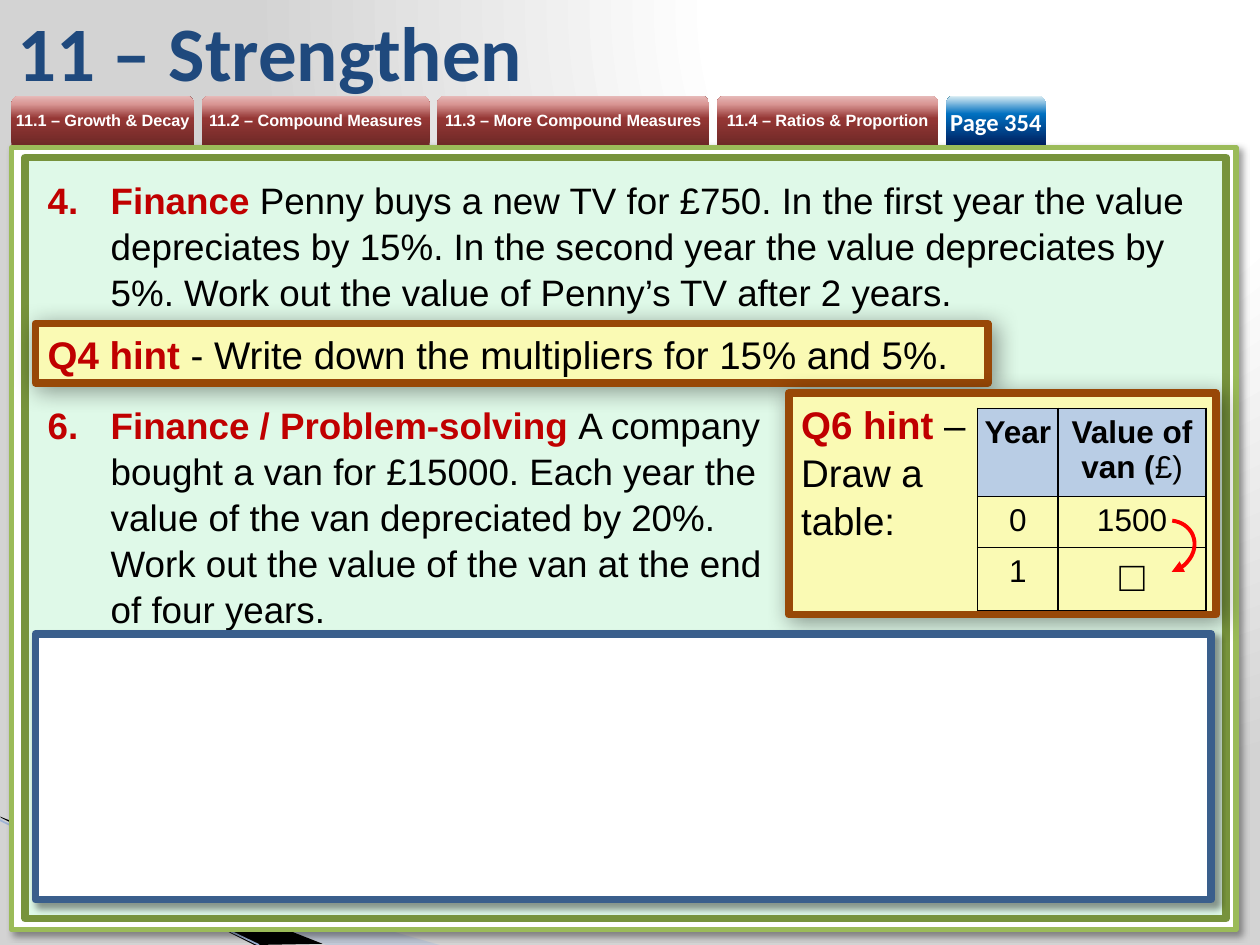
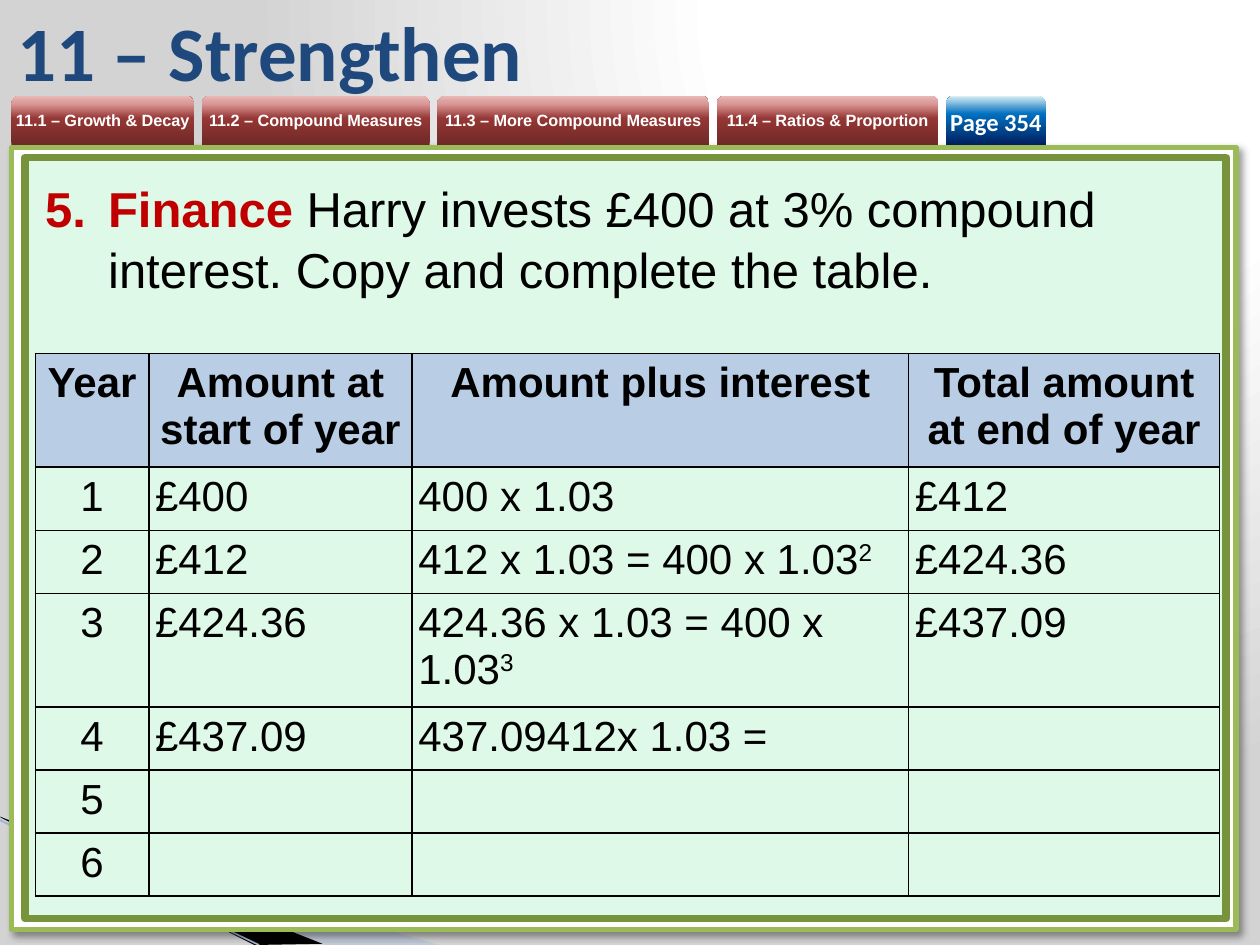
import lxml.etree
import pptx
import pptx.dml.color
import pptx.enum.shapes
import pptx.enum.text
import pptx.oxml.ns
import pptx.util

Pt = pptx.util.Pt
SHAPE = pptx.enum.shapes.MSO_SHAPE
ALIGN = pptx.enum.text.PP_ALIGN
ANCHOR = pptx.enum.text.MSO_ANCHOR

COLOURS = {
    "white": "FFFFFF", "black": "000000", "grey": "D3D3D3",
    "title": "1F497D", "key": "C00000", "arrow": "FF0000",
    "swoosh": "A7B9DB", "swoosh_edge": "9EB3D6",
    "frame": "9BBB59", "panel": "DFF9E8", "panel_edge": "77933C",
    "hint": "FAFAB4", "hint_edge": "984807",
    "answer_edge": "3A5F8C", "header": "B9CDE5",
    "red_1": "6F2927", "red_2": "953735", "red_3": "D99694", "red_4": "E6B9B8",
    "blue_1": "002060", "blue_2": "0070C0", "blue_3": "DBEEF4",
}
RED_TAB = [(0, "red_1"), (54, "red_2"), (83, "red_3"), (100, "red_4")]
BLUE_TAB = [(0, "blue_1"), (63, "blue_2"), (100, "blue_3")]
BACKDROP = [(0, "white"), (40, "white"), (100, "grey")]
LESSONS = [
    ("11.1 – Growth & Decay", 104.4),
    ("11.2 – Compound Measures", 130.3),
    ("11.3 – More Compound Measures", 155.5),
    ("11.4 – Ratios & Proportion", 126.7),
]
TAB_GAP = 4.3
BORDER = 4.33
BODY_SPACING = 1.04
RUN_STYLES = {
    "key": ("key", True),
    "bold": ("black", True),
    "plain": ("black", False),
    "super": ("black", False),
    "tab": ("white", True),
    "title": ("title", True),
}


def rgb(name):
    return pptx.dml.color.RGBColor.from_string(COLOURS[name])


def add(parent, tag, **attributes):
    values = {name: str(value) for name, value in attributes.items()}
    return lxml.etree.SubElement(parent, pptx.oxml.ns.qn(tag), values)


def add_colour(parent, name, alpha=None):
    colour = add(parent, "a:srgbClr", val=COLOURS[name])
    if alpha:
        add(colour, "a:alpha", val=alpha * 1000)


def gradient(element, stops, focus=None):
    solid = element.xpath(".//a:solidFill")[0]
    grad = lxml.etree.Element(pptx.oxml.ns.qn("a:gradFill"), rotWithShape="1")
    solid.getparent().replace(solid, grad)
    stop_list = add(grad, "a:gsLst")
    for position, name in stops:
        add_colour(add(stop_list, "a:gs", pos=position * 1000), name)
    if focus:
        sides = {side: share * 1000 for side, share in zip("ltrb", focus)}
        add(add(grad, "a:path", path="circle"), "a:fillToRect", **sides)
    else:
        add(grad, "a:lin", ang=16200000, scaled=0)


class Deck:
    def __init__(self):
        self.show = pptx.Presentation()
        self.show.slide_width, self.show.slide_height = Pt(720), Pt(540)
        self.slide = None

    def start(self, title, page):
        self.slide = self.show.slides.add_slide(self.show.slide_layouts[5])
        self.slide.background.fill.solid()
        gradient(self.slide.element, BACKDROP, focus=(65, 0, 0, 98))
        self.heading(title)
        self.swoosh([(0, 468), (251.3, 540), (186.5, 540), (0, 467.3)], "swoosh", 40)
        self.swoosh([(0, 466.6), (184.3, 539.3), (145.4, 540), (0.7, 467.3)], "black")
        self.line((0, 468.7), (148, 540), "swoosh_edge", 0.95)
        self.box((6.5, 84.2, 699.8, 447.1), "white", "frame", 3, blur=4)
        self.box((14.4, 90, 686.2, 434.9), "panel", "panel_edge")
        left = 6.5
        for lesson, width in LESSONS:
            self.tab(left, width, lesson, RED_TAB, 9.3, "Arial", Pt(10))
            left += width + TAB_GAP
        self.tab(left, 57, page, BLUE_TAB, 14, "Calibri", 1.0)

    def add_runs(self, paragraph, parts, size, font="Arial", spacing=None):
        if spacing:
            paragraph.line_spacing = spacing
        for text, style, *own_size in parts:
            colour, bold = RUN_STYLES[style]
            for index, line in enumerate(text.split("\n")):
                if index:
                    paragraph.add_line_break()
                run = paragraph.add_run()
                run.text = line
                run.font.name = font
                run.font.size = Pt(own_size[0] if own_size else size)
                run.font.bold = bold
                run.font.color.rgb = rgb(colour)
                if style == "super":
                    run.font._element.set("baseline", "30000")

    def heading(self, text):
        title = self.slide.shapes.title
        title.left, title.top, title.width, title.height = map(Pt, (2.9, 3.6, 595.4, 51.1))
        frame = title.text_frame
        frame.vertical_anchor = ANCHOR.MIDDLE
        frame.auto_size = pptx.enum.text.MSO_AUTO_SIZE.NONE
        frame.paragraphs[0].alignment = ALIGN.LEFT
        self.add_runs(frame.paragraphs[0], [(text, "title")], 44, "Calibri")

    def swoosh(self, points, colour, alpha=None):
        corners = [(Pt(x), Pt(y)) for x, y in points]
        builder = self.slide.shapes.build_freeform(*corners[0])
        builder.add_line_segments(corners[1:], close=True)
        band = builder.convert_to_shape()
        band.shadow.inherit = False
        band.fill.solid()
        band.fill.fore_color.rgb = rgb(colour)
        if alpha:
            add(band.element.xpath("./p:spPr/a:solidFill/a:srgbClr")[0],
                "a:alpha", val=alpha * 1000)
        band.line.fill.background()

    def line(self, start, end, colour, width):
        edge = self.slide.shapes.add_connector(
            pptx.enum.shapes.MSO_CONNECTOR.STRAIGHT, *map(Pt, start + end))
        edge.line.color.rgb = rgb(colour)
        edge.line.width = Pt(width)
        add(edge.element.spPr, "a:effectLst")

    def box(self, place, fill, edge, width=BORDER, blur=None):
        panel = self.slide.shapes.add_shape(SHAPE.RECTANGLE, *map(Pt, place))
        panel.shadow.inherit = False
        panel.fill.solid()
        panel.fill.fore_color.rgb = rgb(fill)
        panel.line.color.rgb = rgb(edge)
        panel.line.width = Pt(width)
        if blur:
            effects = panel.element.xpath("./p:spPr/a:effectLst")[0]
            shadow = add(effects, "a:outerShdw", blurRad=Pt(blur), dist=Pt(3),
                         dir=2700000, algn="tl", rotWithShape=0)
            add_colour(shadow, "black", 40)
        return panel

    def tab(self, left, width, text, stops, size, font, spacing):
        tab = self.slide.shapes.add_shape(
            SHAPE.ROUND_2_SAME_RECTANGLE, *map(Pt, (left, 54.7, width, 28.1)))
        tab.shadow.inherit = False
        tab.fill.solid()
        gradient(tab.element.spPr, stops)
        tab.line.fill.background()
        frame = tab.text_frame
        frame.margin_left = frame.margin_right = frame.margin_top = frame.margin_bottom = 0
        frame.word_wrap = False
        frame.vertical_anchor = ANCHOR.MIDDLE
        frame.paragraphs[0].alignment = ALIGN.CENTER
        self.add_runs(frame.paragraphs[0], [(text, "tab")], size, font, spacing)

    def hint(self, place, parts, anchor):
        frame = self.box(place, "hint", "hint_edge", blur=13).text_frame
        frame.word_wrap = True
        frame.vertical_anchor = anchor
        frame.paragraphs[0].alignment = ALIGN.LEFT
        self.add_runs(frame.paragraphs[0], parts, 22, spacing=BODY_SPACING)

    def questions(self, place, size, items, gap=0):
        frame = self.slide.shapes.add_textbox(*map(Pt, place)).text_frame
        frame.word_wrap = True
        for index, (number, topic, text) in enumerate(items):
            paragraph = frame.add_paragraph() if index else frame.paragraphs[0]
            properties = paragraph._p.get_or_add_pPr()
            properties.set("marL", str(Pt(36)))
            properties.set("indent", str(Pt(-36)))
            add_colour(add(properties, "a:buClr"), "key")
            add(properties, "a:buFont", typeface="+mj-lt")
            add(properties, "a:buAutoNum", type="arabicPeriod", startAt=number)
            stops = add(properties, "a:tabLst")
            for position in (72, 216):
                add(stops, "a:tab", pos=Pt(position), algn="l")
            if index:
                paragraph.space_before = Pt(gap)
            self.add_runs(paragraph, [(topic + " ", "key"), (text, "plain")],
                          size, spacing=BODY_SPACING)

    def table(self, left, top, widths, heights, size, rows, centred):
        grid = self.slide.shapes.add_table(
            len(rows), len(widths),
            *map(Pt, (left, top, sum(widths), sum(heights)))).table
        grid.first_row = grid.horz_banding = False
        for column, width in zip(grid.columns, widths):
            column.width = Pt(width)
        for r, (row, height) in enumerate(zip(rows, heights)):
            grid.rows[r].height = Pt(height)
            for c, content in enumerate(row):
                self.cell(grid.cell(r, c), content, size, r == 0, r == 0 or c in centred)

    def cell(self, cell, content, size, header, centred):
        cell.margin_left = cell.margin_right = cell.margin_top = cell.margin_bottom = Pt(3.6)
        properties = cell._tc.get_or_add_tcPr()
        for side in "LRTB":
            border = add(properties, "a:ln" + side, w=Pt(1))
            add_colour(add(border, "a:solidFill"), "black")
        if header:
            cell.fill.solid()
            cell.fill.fore_color.rgb = rgb("header")
        else:
            cell.fill.background()
        paragraph = cell.text_frame.paragraphs[0]
        paragraph.alignment = ALIGN.CENTER if centred else ALIGN.LEFT
        if isinstance(content, str):
            content = [(content, "bold" if header else "plain")] if content else []
        self.add_runs(paragraph, content, size)

    def curved_arrow(self, place, rotation, angles):
        arrow = self.slide.shapes.add_shape(SHAPE.ARC, *map(Pt, place))
        arrow.shadow.inherit = False
        arrow.rotation = rotation
        for index, angle in enumerate(angles):
            arrow.adjustments[index] = angle
        arrow.fill.background()
        arrow.line.color.rgb = rgb("arrow")
        arrow.line.width = Pt(2.25)
        add(arrow.element.xpath("./p:spPr/a:ln")[0], "a:tailEnd", type="triangle")


def depreciation(deck):
    deck.start("11 – Strengthen", "Page 354")
    deck.questions((20.2, 97.2, 676.8, 262), 21, [
        (4, "Finance",
         "Penny buys a new TV for £750. In the first year the value depreciates by 15%. "
         "In the second year the value depreciates by 5%. "
         "Work out the value of Penny’s TV after 2 years."),
        (6, "Finance / Problem-solving",
         "A company\nbought a van for £15000. Each year the\n"
         "value of the van depreciated by 20%.\n"
         "Work out the value of the van at the end\nof four years."),
    ], gap=50)
    deck.hint((20.2, 185, 544.3, 33.8), [
        ("Q4 hint", "key"),
        (" - Write down the multipliers for 15% and 5%.", "plain"),
    ], ANCHOR.MIDDLE)
    deck.hint((450.7, 224.6, 244.1, 126.7), [
        ("Q6 hint ", "key"), ("–\nDraw a\ntable:", "plain"),
    ], ANCHOR.TOP)
    deck.table(558.7, 233.3, [46, 84.4], [50.3, 29, 36], 18, [
        ["Year", [("Value of van (", "bold"), ("£)", "plain")]],
        ["0", "1500"],
        ["1", [("□", "plain", 24)]],
    ], centred=(0, 1))
    deck.curved_arrow((650.9, 295.2, 29.5, 34.6), 67.6, (130.78, 4.29))
    deck.box((20.2, 362.2, 671.8, 151.9), "white", "answer_edge", blur=4)


def compound_interest(deck):
    deck.start("11 – Strengthen", "Page 354")
    deck.questions((18.7, 97.2, 627.1, 74.9), 28, [
        (5, "Finance",
         "Harry invests £400 at 3% compound interest. Copy and complete the table."),
    ])
    deck.table(20.2, 202, [64.8, 150.5, 283.7, 177.8],
               [65, 36, 36, 65, 36, 36, 36], 24, [
        ["Year", "Amount at start of year", "Amount plus interest",
         "Total amount at end of year"],
        ["1", "£400", "400 x 1.03", "£412"],
        ["2", "£412", [("412 x 1.03 = 400 x 1.03", "plain"), ("2", "super")], "£424.36"],
        ["3", "£424.36", [("424.36 x 1.03 = 400 x 1.03", "plain"), ("3", "super")],
         "£437.09"],
        ["4", "£437.09", "437.09412x 1.03 =", ""],
        ["5", "", "", ""],
        ["6", "", "", ""],
    ], centred=(0,))


def main():
    deck = Deck()
    depreciation(deck)
    compound_interest(deck)
    deck.show.save("out.pptx")


if __name__ == "__main__":
    main()
